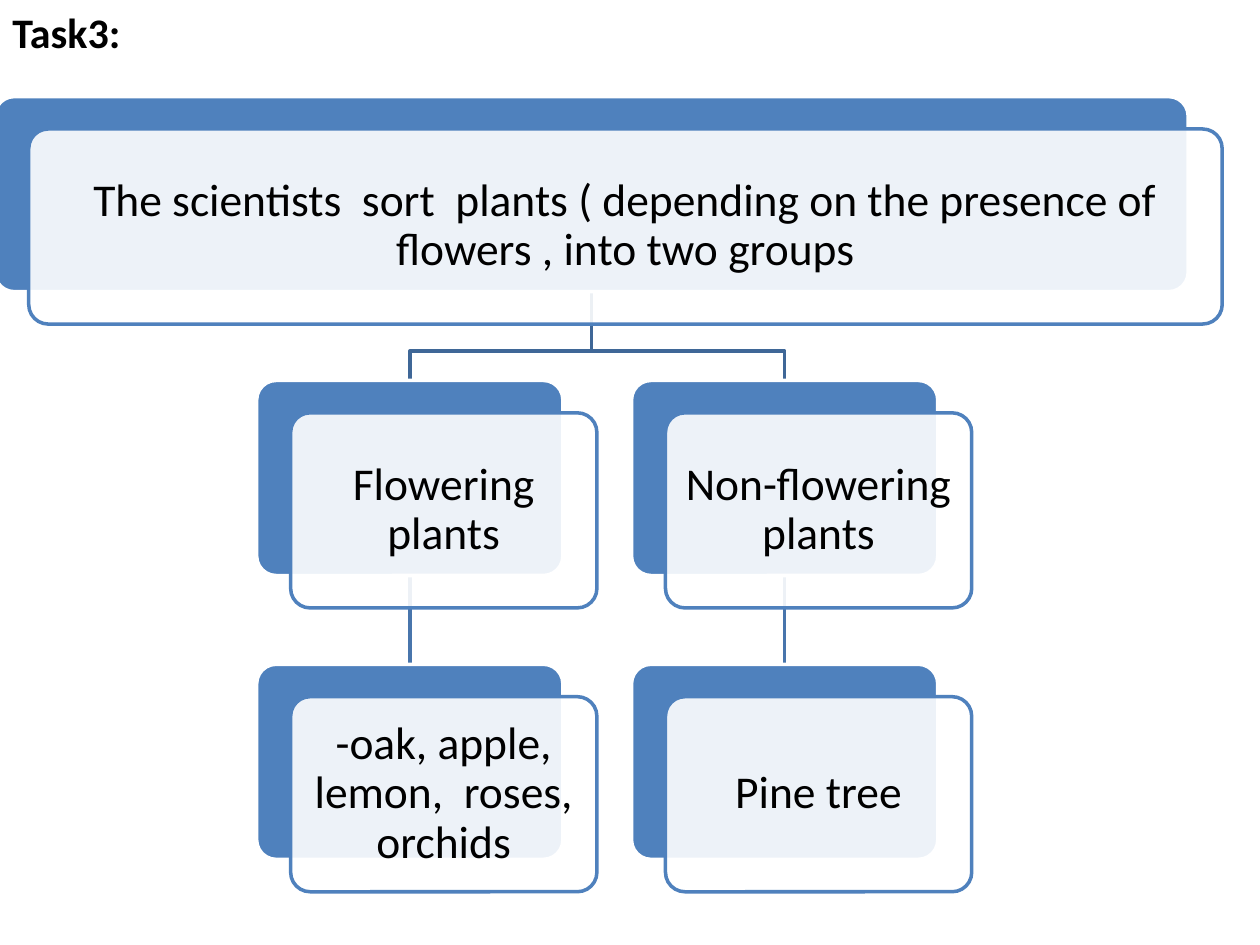
from dataclasses import dataclass

from pptx import Presentation
from pptx.dml.color import RGBColor
from pptx.enum.shapes import MSO_CONNECTOR, MSO_SHAPE
from pptx.enum.text import MSO_ANCHOR, PP_ALIGN
from pptx.oxml.ns import qn
from pptx.util import Pt
from lxml import etree

ROUNDED = MSO_SHAPE.ROUNDED_RECTANGLE
STRAIGHT = MSO_CONNECTOR.STRAIGHT
LEFT, CENTER = PP_ALIGN.LEFT, PP_ALIGN.CENTER
TOP, MIDDLE = MSO_ANCHOR.TOP, MSO_ANCHOR.MIDDLE

BLACK = RGBColor(0x00, 0x00, 0x00)
WHITE = RGBColor(0xFF, 0xFF, 0xFF)
BLUE = RGBColor(0x4F, 0x81, 0xBD)
ELBOW_BLUE = RGBColor(0x3F, 0x67, 0x97)
LINK_BLUE = RGBColor(0x48, 0x75, 0xAC)

FONT = "Calibri"
SLIDE_WIDTH, SLIDE_HEIGHT = 720, 540
CARD_WIDTH, CARD_HEIGHT = 175, 111.5
COLUMN_LEFT, COLUMN_STEP = 146.7, 214.2
ROW_TOP, ROW_STEP = 55.2, 162.2
OFFSET_X, OFFSET_Y = 19.4, 18.5
ELBOW_DROP = 34
LINE_WIDTH = 2


@dataclass
class Card:
    text: str
    left: float
    row: int
    width: float = CARD_WIDTH

    @property
    def top(self) -> float:
        return ROW_TOP + self.row * ROW_STEP

    @property
    def center(self) -> float:
        return self.left + self.width / 2


def write_text(shape, text: str, *, size: float, bold=False, align=CENTER,
               anchor=MIDDLE, line_spacing=1.0, margins=(8, 8)) -> None:
    frame = shape.text_frame
    frame.word_wrap = True
    frame.vertical_anchor = anchor
    frame.margin_left = frame.margin_right = Pt(margins[0])
    frame.margin_top = frame.margin_bottom = Pt(margins[1])
    paragraph = frame.paragraphs[0]
    paragraph.alignment = align
    paragraph.line_spacing = line_spacing
    run = paragraph.add_run()
    run.text = text
    run.font.name = FONT
    run.font.size = Pt(size)
    run.font.bold = bold
    run.font.color.rgb = BLACK


def add_panel(slide, left: float, top: float, width: float,
              fill: RGBColor, line: RGBColor):
    shape = slide.shapes.add_shape(ROUNDED, Pt(left), Pt(top), Pt(width), Pt(CARD_HEIGHT))
    shape.shadow.inherit = False
    shape.adjustments[0] = 0.1
    shape.fill.solid()
    shape.fill.fore_color.rgb = fill
    shape.line.color.rgb = line
    shape.line.width = Pt(LINE_WIDTH)
    return shape


def add_card(slide, card: Card):
    """Draw a solid panel under a translucent one; return the solid panel."""
    back = add_panel(slide, card.left, card.top, card.width, BLUE, WHITE)
    front = add_panel(slide, card.left + OFFSET_X, card.top + OFFSET_Y,
                      card.width, WHITE, BLUE)
    color = front.fill._xPr.find(qn("a:solidFill"))[0]
    etree.SubElement(color, qn("a:alpha")).set("val", "90000")
    write_text(front, card.text, size=26, line_spacing=0.9)
    return back


def send_to_back(slide, shape) -> None:
    slide.shapes._spTree.insert(2, shape._element)


def add_link(slide, upper, lower) -> None:
    link = slide.shapes.add_connector(STRAIGHT, 0, 0, 0, 0)
    link.begin_connect(upper, 2)
    link.end_connect(lower, 0)
    link.line.color.rgb = LINK_BLUE
    link.line.width = Pt(LINE_WIDTH)
    etree.SubElement(link._element.spPr, qn("a:effectLst"))
    send_to_back(slide, link)


def add_elbow(slide, parent: Card, child: Card) -> None:
    start = parent.top + CARD_HEIGHT
    bend = start + ELBOW_DROP
    builder = slide.shapes.build_freeform(Pt(parent.center), Pt(start))
    builder.add_line_segments([(Pt(parent.center), Pt(bend)),
                               (Pt(child.center), Pt(bend)),
                               (Pt(child.center), Pt(child.top))], close=False)
    elbow = builder.convert_to_shape()
    elbow.shadow.inherit = False
    elbow.fill.background()
    elbow.line.color.rgb = ELBOW_BLUE
    elbow.line.width = Pt(LINE_WIDTH)
    send_to_back(slide, elbow)


def main() -> None:
    presentation = Presentation()
    presentation.slide_width, presentation.slide_height = Pt(SLIDE_WIDTH), Pt(SLIDE_HEIGHT)
    slide = presentation.slides.add_slide(presentation.slide_layouts[6])

    # Cards of the tree and the lines between them
    root = Card("The scientists  sort  plants ( depending on the presence of "
                "flowers , into two groups", -3, 0, 682)
    branches = [("Flowering plants", "-oak, apple, lemon,  roses, orchids"),
                ("Non-flowering plants", "Pine tree")]
    add_card(slide, root)
    for column, (group, examples) in enumerate(branches):
        left = COLUMN_LEFT + column * COLUMN_STEP
        group_card = Card(group, left, 1)
        group_panel = add_card(slide, group_card)
        examples_panel = add_card(slide, Card(examples, left, 2))
        add_elbow(slide, root, group_card)
        add_link(slide, group_panel, examples_panel)

    # Heading, behind the tree
    heading = slide.shapes.add_textbox(0, 0, Pt(SLIDE_WIDTH), Pt(SLIDE_HEIGHT))
    write_text(heading, "Task3:", size=24, bold=True, align=LEFT, anchor=TOP,
               margins=(7.2, 3.6))
    send_to_back(slide, heading)

    presentation.save("out.pptx")


if __name__ == "__main__":
    main()
